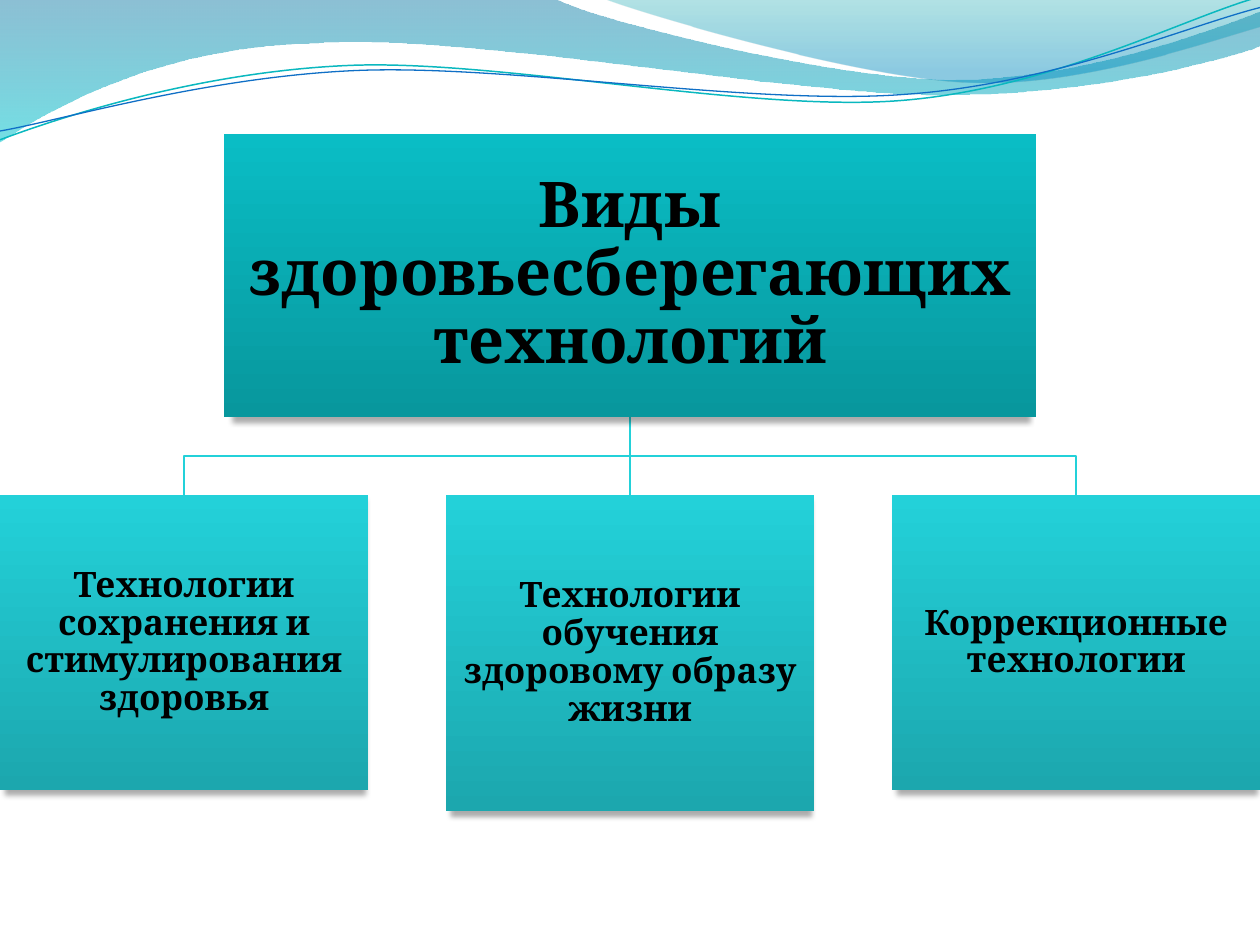
from lxml import etree
from pptx import Presentation
from pptx.dml.color import RGBColor
from pptx.enum.shapes import MSO_SHAPE
from pptx.enum.text import MSO_ANCHOR, PP_ALIGN
from pptx.oxml.ns import qn
from pptx.util import Inches, Pt

RECT = MSO_SHAPE.RECTANGLE
CENTER = PP_ALIGN.CENTER
MIDDLE = MSO_ANCHOR.MIDDLE

BLACK = RGBColor(0x00, 0x00, 0x00)
NAVY = RGBColor(0x00, 0x74, 0xA1)
AQUA = RGBColor(0x00, 0xC6, 0xCF)
TEAL = RGBColor(0x00, 0xA1, 0xA9)
SKY = RGBColor(0x00, 0x8B, 0xBF)
SEA = RGBColor(0x0A, 0xB8, 0xBF)
BLUE = RGBColor(0x0F, 0x6F, 0xC6)
LINK = RGBColor(0x23, 0xD1, 0xD9)
HEAD = (RGBColor(0x0A, 0xBD, 0xC5), RGBColor(0x08, 0x97, 0x9D))
LEAF = (LINK, RGBColor(0x1C, 0xA7, 0xAE))

WIDE, HIGH = 10, 7.5
BOX = 2.92
STEP = (WIDE - BOX) / 2
MID = WIDE / 2
HEAD_W, HEAD_H, HEAD_Y = 6.45, 2.25, 1.06
FOOT = HEAD_Y + HEAD_H
LEAF_Y = 3.93
BAR_Y = (FOOT + LEAF_Y) / 2
STEM_W = 0.1

LEAVES = [
    ("Технологии сохранения и стимулирования здоровья", 2.34),
    ("Технологии обучения здоровому образу жизни", 2.51),
    ("Коррекционные технологии", 2.34),
]

BAND = [
    (0, 0), (4.4, -0.01),
    (4.76, 0.17, 6.64, 0.63, 7.58, 0.63),
    (8.53, 0.63, 9.58, 0.26, 10, 0.09),
    (10.01, 0.36),
    (9.83, 0.44, 8.7, 0.76, 7.46, 0.75),
    (6.22, 0.75, 3.82, 0.28, 2.57, 0.34),
    (1.29, 0.36, 0.46, 0.83, -0.01, 1.13),
    (0, 0),
]
CREST = [
    (4.79, -0.01),
    (5.09, 0.11, 6.82, 0.62, 7.69, 0.65),
    (8.56, 0.69, 9.61, 0.32, 10, 0.21),
    (10, 0), (4.79, -0.01),
]
UPPER = [
    (0, 1.11),
    (0.48, 0.93, 1.58, 0.57, 2.77, 0.52),
    (3.95, 0.47, 5.93, 0.89, 7.13, 0.8),
    (8.33, 0.71, 9.38, 0.15, 9.98, -0.02),
]
LOWER = [
    (0, 1.04),
    (0.47, 0.96, 1.64, 0.61, 2.83, 0.56),
    (4.03, 0.51, 5.97, 0.84, 7.17, 0.75),
    (8.36, 0.67, 9.41, 0.21, 10, 0.06),
]


def bend(shape, parts):
    lines = iter(list(shape._element.iter(qn("a:lnTo"))))
    for part in parts:
        first = next(lines)
        if len(part) == 2:
            continue
        curve = etree.Element(qn("a:cubicBezTo"))
        first.addprevious(curve)
        for line in (first, next(lines), next(lines)):
            curve.append(line[0])
            line.getparent().remove(line)


def outline(slide, parts, close):
    flat = [Inches(v) for part in parts for v in part]
    points = list(zip(flat[::2], flat[1::2]))
    pen = slide.shapes.build_freeform(*points[0])
    pen.add_line_segments(points[1:], close=close)
    shape = pen.convert_to_shape()
    bend(shape, parts[1:])
    shape.shadow.inherit = False
    return shape


def shade(shape, colors, end=1, alphas=()):
    fill = shape.fill
    fill.gradient()
    fill.gradient_angle = 270
    for stop, color, place in zip(fill.gradient_stops, colors, (0, end)):
        stop.color.rgb = color
        stop.position = place
    for tone, alpha in zip(shape._element.spPr.iter(qn("a:srgbClr")), alphas):
        etree.SubElement(tone, qn("a:alpha"), val=str(alpha * 1000))
    shape.line.fill.background()


def stroke(slide, parts, color, width):
    shape = outline(slide, parts, False)
    shape.fill.background()
    shape.line.color.rgb = color
    shape.line.width = Pt(width)
    return shape


def stem(slide):
    shape = stroke(slide, [(MID, FOOT), (MID, LEAF_Y)], LINK, 0.75)
    shape.left = Inches(MID - STEM_W / 2)
    shape.width = Inches(STEM_W)
    for track in shape._element.iter(qn("a:path")):
        track.set("w", str(Inches(STEM_W)))
        for point in track.iter(qn("a:pt")):
            point.set("x", str(Inches(STEM_W / 2)))


def cast(shape):
    shape.shadow.inherit = False
    effects = shape._element.spPr.find(qn("a:effectLst"))
    outer = etree.SubElement(
        effects, qn("a:outerShdw"), blurRad=str(Pt(3)), dist=str(Pt(3)),
        dir="4800000", sx="98000", algn="b", rotWithShape="0")
    tone = etree.SubElement(outer, qn("a:srgbClr"), val=str(BLACK))
    etree.SubElement(tone, qn("a:alpha"), val="32000")


def card(slide, text, area, colors, size, inset):
    shape = slide.shapes.add_shape(RECT, *map(Inches, area))
    shade(shape, colors)
    cast(shape)
    frame = shape.text_frame
    frame.word_wrap = True
    frame.vertical_anchor = MIDDLE
    frame.margin_left = frame.margin_right = Inches(inset)
    frame.margin_top = frame.margin_bottom = Inches(inset)
    para = frame.paragraphs[0]
    para.text = text
    para.alignment = CENTER
    para.line_spacing = 0.9
    font = para.font
    font.name = "Cambria"
    font.size = Pt(size)
    font.bold = True
    font.color.rgb = BLACK


def main():
    deck = Presentation()
    deck.slide_width, deck.slide_height = Inches(WIDE), Inches(HIGH)
    slide = deck.slides.add_slide(deck.slide_layouts[6])

    shade(outline(slide, BAND, True), (NAVY, AQUA), alphas=(45, 55))
    shade(outline(slide, CREST, True), (TEAL, SKY), 0.8, (30, 45))
    stroke(slide, UPPER, SEA, 0.85)
    stroke(slide, LOWER, BLUE, 0.75)

    for x in (MID + STEP, MID - STEP):
        stroke(slide, [(MID, FOOT), (MID, BAR_Y), (x, BAR_Y), (x, LEAF_Y)], LINK, 0.75)
    stem(slide)

    area = (MID - HEAD_W / 2, HEAD_Y, HEAD_W, HEAD_H)
    card(slide, "Виды здоровьесберегающих технологий", area, HEAD, 36, 0.03)
    for i, (text, height) in enumerate(LEAVES):
        card(slide, text, (i * STEP, LEAF_Y, BOX, height), LEAF, 20, 0.01)

    deck.save("out.pptx")


if __name__ == "__main__":
    main()
